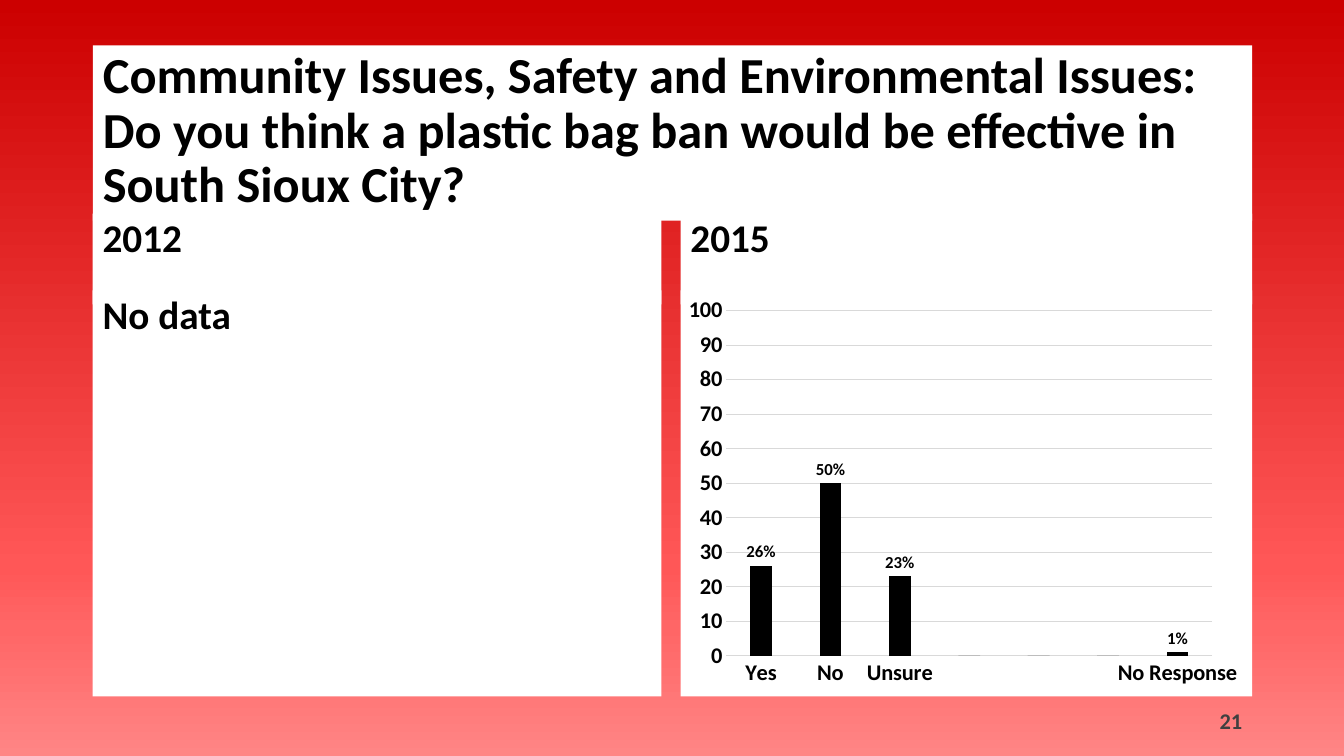
from lxml import etree
from pptx import Presentation
from pptx.chart.data import CategoryChartData
from pptx.dml.color import RGBColor
from pptx.enum.chart import XL_CHART_TYPE, XL_LABEL_POSITION, XL_TICK_MARK
from pptx.enum.text import MSO_ANCHOR, PP_ALIGN
from pptx.oxml import parse_xml
from pptx.oxml.ns import nsdecls, qn
from pptx.util import Inches, Pt

COLUMN = XL_CHART_TYPE.COLUMN_CLUSTERED
OUTSIDE = XL_LABEL_POSITION.OUTSIDE_END
NO_TICK = XL_TICK_MARK.NONE
TOP, MIDDLE = MSO_ANCHOR.TOP, MSO_ANCHOR.MIDDLE
LEFT, RIGHT = PP_ALIGN.LEFT, PP_ALIGN.RIGHT

FONT = "Calibri"
BLACK, WHITE, GREY, GRID = "000000", "FFFFFF", "404040", "D9D9D9"
STOPS = [(0, "CC0000"), (75, "FF5757"), (83, "FF6666"), (100, "FF8585")]

# Rows and columns of the slide, in inches
X1, X2, EDGE = 0.92, 6.75, 12.42
LEFT_W, RIGHT_W = 5.64, EDGE - X2
HEAD_Y, HEAD_H = 2.12, 0.9
BODY_Y, BODY_H = 2.88, 4.03

ANSWERS = [("Yes", 26), ("No", 50), ("Unsure", 23),
           ("", 0), ("", 0), ("", 0), ("No Response", 1)]


def rgb(color):
    return RGBColor.from_string(color)


def style_font(font, size, color=BLACK):
    font.name, font.size, font.bold = FONT, Pt(size), True
    font.color.rgb = rgb(color)


def place(sp, box):
    sp.left, sp.top, sp.width, sp.height = (Inches(v) for v in box)


def write(sp, text, size, color=BLACK, align=LEFT, anchor=TOP, spacing=0.9, before=0):
    tf = sp.text_frame
    tf.word_wrap = True
    tf.vertical_anchor = anchor
    p = tf.paragraphs[0]
    p.alignment, p.line_spacing, p.space_before = align, spacing, Pt(before)
    r = p.add_run()
    r.text = text
    style_font(r.font, size, color)


def add_background(s):
    fill = s.background.fill
    fill.gradient()
    fill.gradient_angle = 270  # counter-clockwise, so top to bottom
    gs_list = s.background._cSld.find(".//" + qn("a:gsLst"))
    for gs in list(gs_list):
        gs_list.remove(gs)
    for pos, color in STOPS:
        gs = etree.SubElement(gs_list, qn("a:gs"), pos=str(pos * 1000))
        etree.SubElement(gs, qn("a:srgbClr"), val=color)


def add_title(s, text, box):
    sp = s.shapes.title
    place(sp, box)
    sp.fill.solid()
    sp.fill.fore_color.rgb = rgb(WHITE)
    write(sp, text, 36)


def add_panel(s, text, box):
    sp = s.shapes.add_textbox(*(Inches(v) for v in box))
    sp.fill.solid()
    sp.fill.fore_color.rgb = rgb(WHITE)
    write(sp, text, 28, before=10)


def set_plot_area(chart, x, y, w, h):
    """Fix the inner plot area as shares of the chart and fill the chart white."""
    plot_area = chart._chartSpace.chart.plotArea
    for old in plot_area.findall(qn("c:layout")):
        plot_area.remove(old)
    sizes = "".join(f'<c:{k} val="{v}"/>' for k, v in zip("xywh", (x, y, w, h)))
    plot_area.insert(0, parse_xml(
        f'<c:layout {nsdecls("c")}><c:manualLayout><c:layoutTarget val="inner"/>'
        f'<c:xMode val="edge"/><c:yMode val="edge"/>{sizes}</c:manualLayout></c:layout>'))
    chart._chartSpace.chart.addnext(parse_xml(
        f'<c:spPr {nsdecls("c", "a")}><a:solidFill><a:srgbClr val="{WHITE}"/></a:solidFill>'
        '<a:ln><a:noFill/></a:ln></c:spPr>'))


def add_answer_chart(s, box):
    data = CategoryChartData()
    data.categories = [name for name, _ in ANSWERS]
    data.add_series("Series 1", [value for _, value in ANSWERS])
    chart = s.shapes.add_chart(COLUMN, *(Inches(v) for v in box), data).chart
    chart.has_legend = chart.has_title = False
    style_font(chart.font, 10)
    set_plot_area(chart, 0.08, 0.05, 0.85, 0.85)

    # Columns and their labels; the number format hides zeros
    plot = chart.plots[0]
    plot.gap_width, plot.overlap, plot.vary_by_categories = 219, -27, False
    fill = plot.series[0].format.fill
    fill.solid()
    fill.fore_color.rgb = rgb(BLACK)
    plot.has_data_labels = True
    labels = plot.data_labels
    labels.show_value, labels.position = True, OUTSIDE
    labels.number_format, labels.number_format_is_linked = '0"%";;', False
    style_font(labels.font, 12)

    # Axes
    cat, val = chart.category_axis, chart.value_axis
    for axis in (cat, val):
        axis.major_tick_mark = axis.minor_tick_mark = NO_TICK
        style_font(axis.tick_labels.font, 16)
    val.minimum_scale, val.maximum_scale, val.major_unit = 0, 100, 10
    val.tick_labels.number_format = "0"
    val.tick_labels.number_format_is_linked = False
    val.format.line.fill.background()
    for line in (cat.format.line, val.major_gridlines.format.line):
        line.color.rgb = rgb(GRID)
        line.width = Pt(0.75)
    body = cat._element.find(qn("c:txPr")).find(qn("a:bodyPr"))
    body.set("rot", "-60000000")
    body.set("vert", "horz")


def add_page_number(s, number, box):
    sp = s.shapes.add_textbox(*(Inches(v) for v in box))
    write(sp, number, 16, GREY, RIGHT, MIDDLE, spacing=1)


def main():
    prs = Presentation()
    prs.slide_width, prs.slide_height = Inches(13.33), Inches(7.5)
    s = prs.slides.add_slide(prs.slide_layouts[5])
    add_background(s)
    add_title(s, "Community Issues, Safety and Environmental Issues: Do you think "
                 "a plastic bag ban would be effective in South Sioux City?",
              (X1, 0.45, EDGE - X1, 1.74))
    add_panel(s, "2012", (X1, HEAD_Y, LEFT_W, HEAD_H))
    add_panel(s, "No data", (X1, BODY_Y, LEFT_W, BODY_H))
    add_panel(s, "2015", (X2, HEAD_Y, RIGHT_W, HEAD_H))
    add_answer_chart(s, (X2, BODY_Y, RIGHT_W, BODY_H))
    add_page_number(s, "21", (EDGE - 3, 6.95, 3, 0.4))
    prs.save("out.pptx")


if __name__ == "__main__":
    main()
